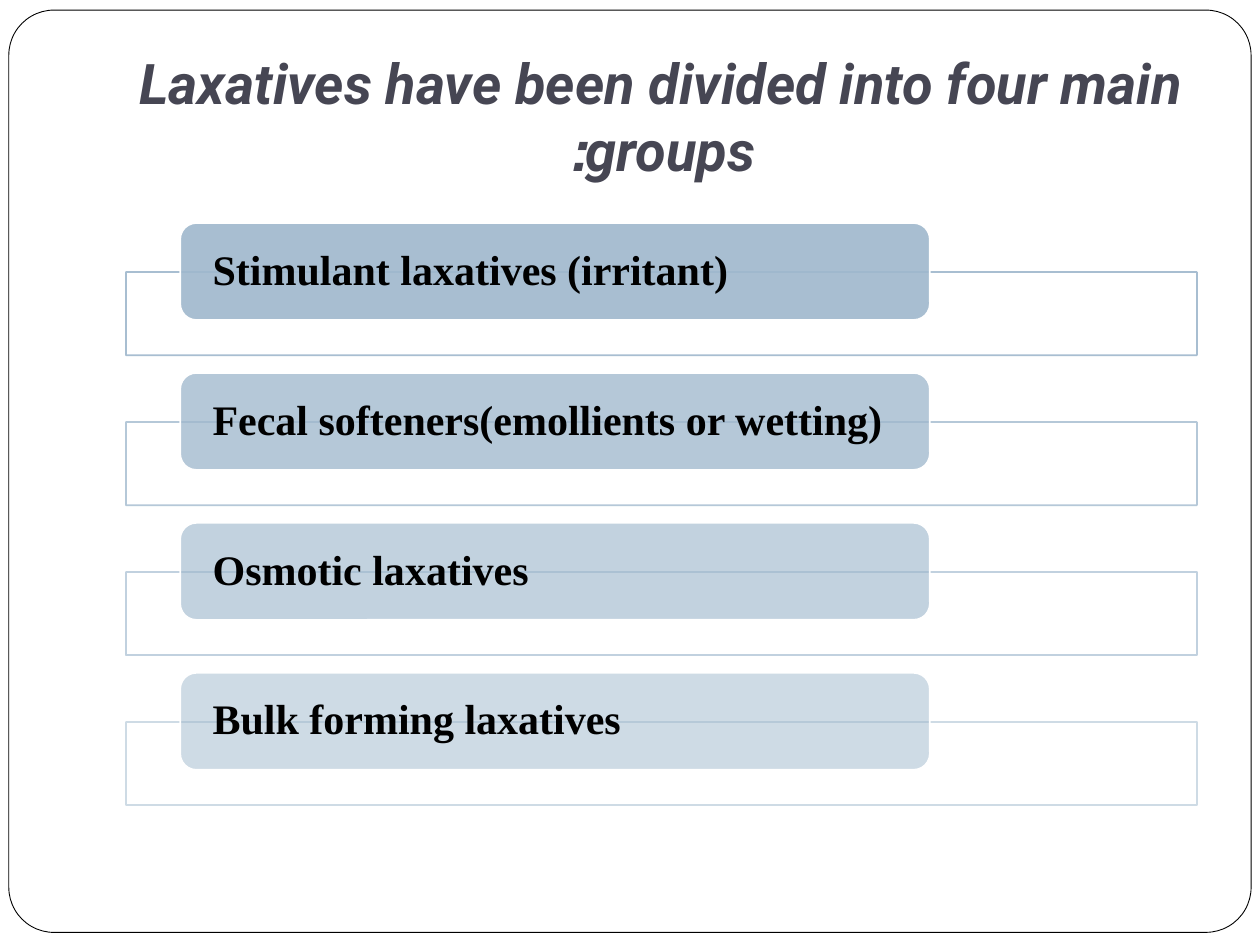
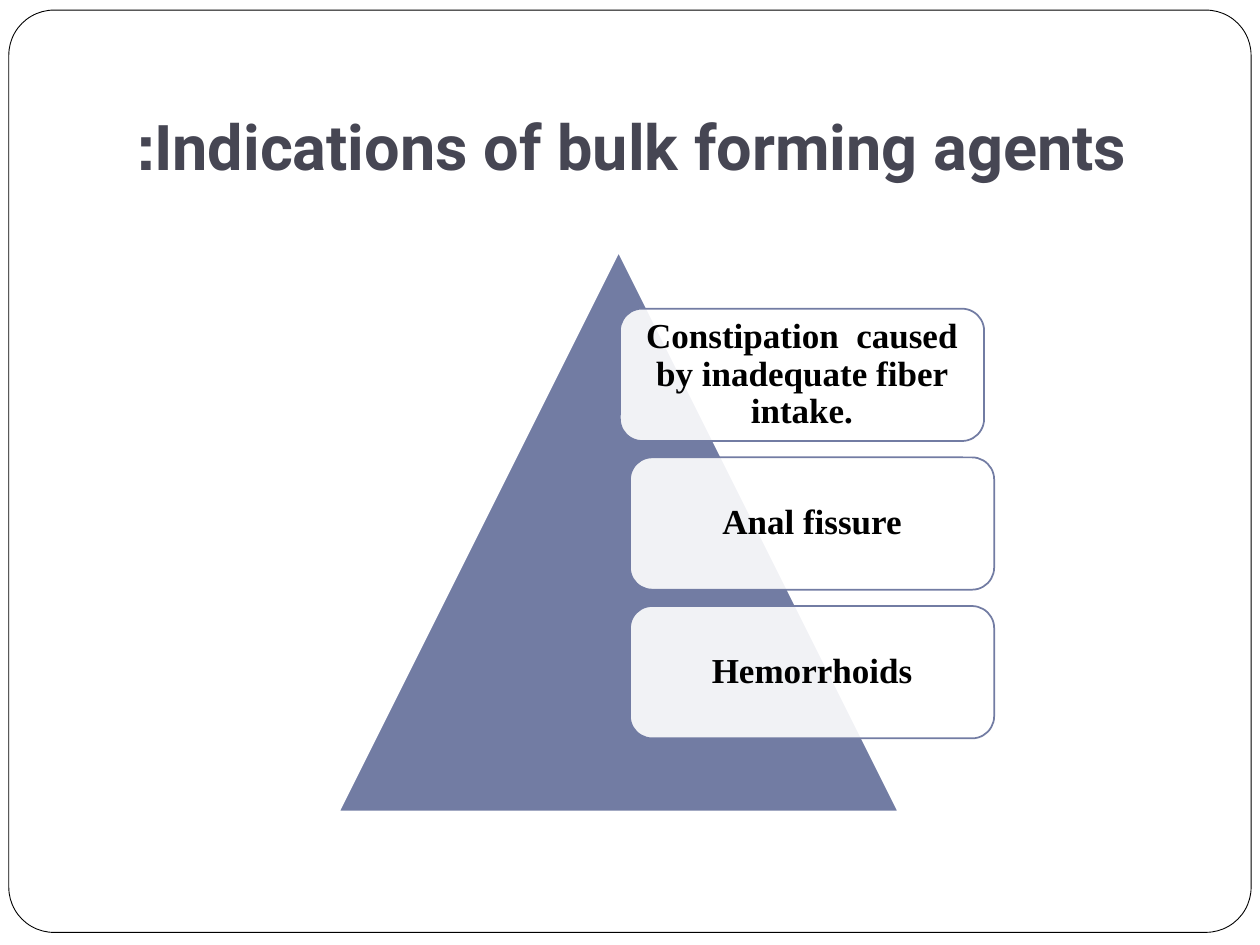
from dataclasses import dataclass

from lxml.etree import SubElement
from pptx import Presentation
from pptx.dml.color import RGBColor
from pptx.enum.shapes import MSO_SHAPE
from pptx.enum.text import MSO_ANCHOR, PP_ALIGN
from pptx.oxml.ns import qn
from pptx.util import Pt

PX = 9144  # 100 px to the inch


@dataclass(frozen=True)
class Theme:
    white: str = "FFFFFF"
    black: str = "000000"
    title: str = "464653"
    pale_blue: str = "9FB8CD"
    indigo: str = "727CA3"
    title_font: str = "Roboto"
    body_font: str = "Times New Roman"
    group_size: int = 24
    indication_size: int = 20


theme = Theme()


def add_shape(s, kind, box, fill, line, width=1, fill_alpha=100, line_alpha=100):
    """Add a flat shape; box is in px and the alphas are percentages of opacity."""
    sp = s.shapes.add_shape(kind, *(v * PX for v in box))
    sp.shadow.inherit = False
    sp.fill.solid()
    sp.fill.fore_color.rgb = RGBColor.from_string(fill)
    sp.line.color.rgb = RGBColor.from_string(line)
    sp.line.width = Pt(width)
    colors = sp.element.spPr.iter(qn("a:srgbClr"))
    for color, alpha in zip(list(colors), (fill_alpha, line_alpha)):
        if alpha < 100:
            SubElement(color, qn("a:alpha"), val=str(alpha * 1000))
    return sp


def set_text(sp, text, font, size, color, align, anchor, margins, rtl=True, italic=False):
    """Write one bold paragraph; margins are left, top, right, bottom in px."""
    tf = sp.text_frame
    tf.text = text
    tf.word_wrap = True
    tf.vertical_anchor = anchor
    tf.margin_left, tf.margin_top, tf.margin_right, tf.margin_bottom = (m * PX for m in margins)
    p = tf.paragraphs[0]
    p.alignment = align
    if rtl:
        p._p.get_or_add_pPr().set("rtl", "1")
    r = p.runs[0]
    r.font.name = font
    r.font.size = Pt(size)
    r.font.bold = True
    r.font.italic = italic
    r.font.color.rgb = RGBColor.from_string(color)
    return p


prs = Presentation()
prs.slide_width, prs.slide_height = 1000 * PX, 750 * PX
layout = prs.slide_layouts[5]

# Slides and their titles
titles = [
    ("Laxatives have been divided into four main groups:", 32, PP_ALIGN.CENTER, True),
    ("Indications of bulk forming agents:", 36, PP_ALIGN.LEFT, False),
]
for text, size, align, italic in titles:
    s = prs.slides.add_slide(layout)
    title = s.shapes.title
    title.left, title.top, title.width, title.height = (v * PX for v in (100, 30, 850, 125))
    set_text(title, text, theme.title_font, size, theme.title, align,
             MSO_ANCHOR.BOTTOM, (10, 5, 10, 10), italic=italic)
groups_slide, indications_slide = prs.slides

# Rounded frame, moved to the back of the shared layout
frame = add_shape(groups_slide, MSO_SHAPE.ROUNDED_RECTANGLE, (7, 8, 986, 732),
                  theme.white, theme.black, width=0.5)
frame.adjustments[0] = 0.049
layout.shapes.element.insert(2, frame.element)

# Slide 1: a label over an open bar for each group, paler downwards
groups = [
    ("Stimulant laxatives (irritant)", 90),
    ("Fecal softeners(emollients or wetting)", 77),
    ("Osmotic laxatives", 63),
    ("Bulk forming laxatives", 50),
]
for i, (text, alpha) in enumerate(groups):
    top = 177 + i * 119
    add_shape(groups_slide, MSO_SHAPE.RECTANGLE, (100, top + 39, 850, 66),
              theme.white, theme.pale_blue, fill_alpha=90, line_alpha=alpha)
    label = add_shape(groups_slide, MSO_SHAPE.ROUNDED_RECTANGLE, (143, top, 595, 77),
                      theme.pale_blue, theme.white, fill_alpha=alpha)
    p = set_text(label, text, theme.body_font, theme.group_size, theme.black,
                 PP_ALIGN.LEFT, MSO_ANCHOR.MIDDLE, (22, 0, 22, 0))
    p.line_spacing = 0.9

# Slide 2: a pyramid with the indications stacked on its right side
add_shape(indications_slide, MSO_SHAPE.ISOSCELES_TRIANGLE, (269, 200, 444, 444),
          theme.indigo, theme.white)
indications = [
    ("Constipation  caused by inadequate fiber intake.", 492, False),
    ("Anal fissure", 500, True),
    ("Hemorrhoids", 500, True),
]
for i, (text, left, rtl) in enumerate(indications):
    card = add_shape(indications_slide, MSO_SHAPE.ROUNDED_RECTANGLE,
                     (left, 245 + i * 118, 289, 105),
                     theme.white, theme.indigo, fill_alpha=90)
    p = set_text(card, text, theme.body_font, theme.indication_size, theme.black,
                 PP_ALIGN.CENTER, MSO_ANCHOR.MIDDLE, (8, 8, 8, 8), rtl=rtl)
    p.line_spacing = 0.9

prs.save("out.pptx")
